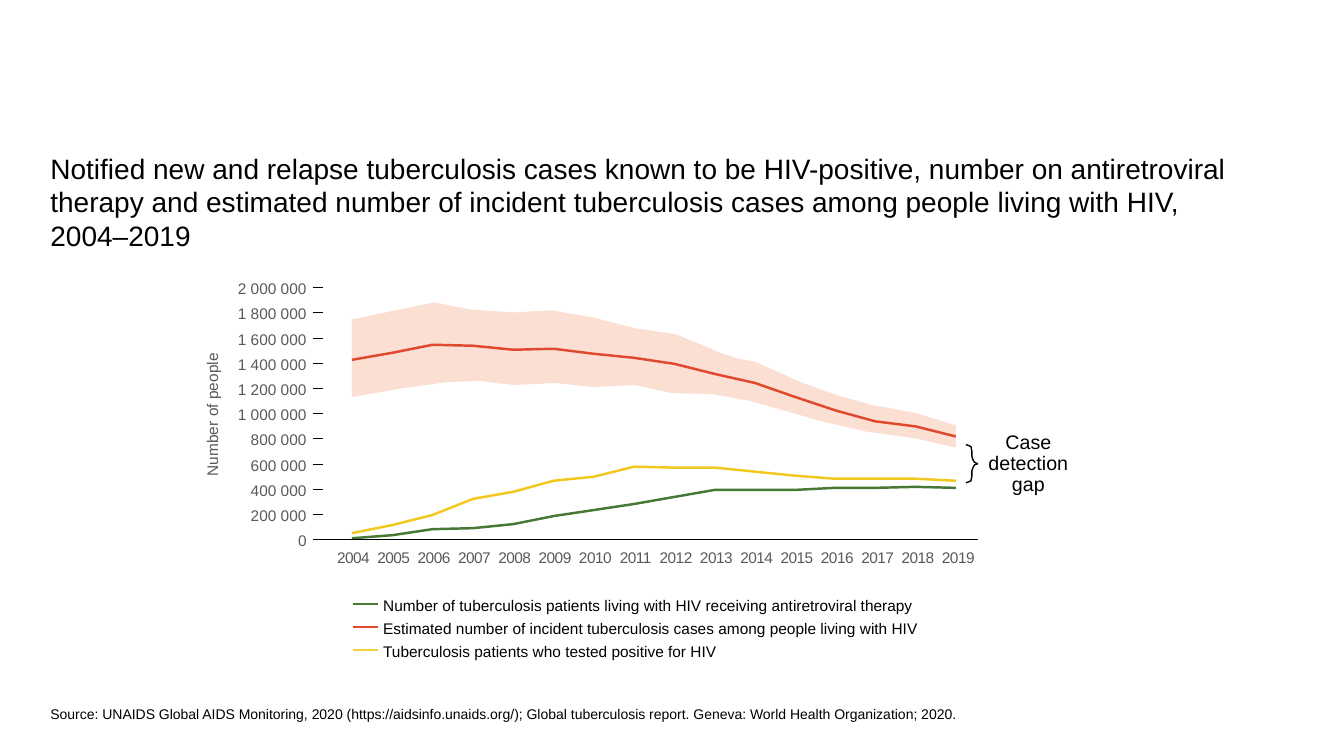
from lxml.etree import SubElement
from pptx import Presentation
from pptx.dml.color import RGBColor
from pptx.enum.shapes import MSO_CONNECTOR as Connector
from pptx.enum.text import MSO_AUTO_SIZE as AutoSize, PP_ALIGN as Align
from pptx.oxml.ns import qn
from pptx.util import Pt

EMU_PER_PX = 9144
BLACK, GREY = "000000", "595959"
GREEN, RED, YELLOW = "477835", "E1492E", "F2C81E"
LEGEND_YELLOW, BAND = "F4D041", "FBDFD3"

THERAPY = [534, 531, 525, 524, 520, 512, 506, 500, 493, 486, 486, 486, 484, 484, 483, 484]
TESTED = [529, 521, 511, 495, 488, 477, 473, 463, 464, 464, 468, 472, 475, 475, 475, 477]
INCIDENT = [357, 350, 342, 343, 347, 346, 351, 355, 361, 371, 380, 394, 407, 418, 423, 433]
UNCERTAINTY = [
    (431, 300), (426, 301), (349, 317), (349, 394), (394, 386), (444, 379), (476, 378),
    (510, 382), (550, 380), (560, 381), (588, 384), (628, 382), (639, 384), (666, 390),
    (706, 391), (712, 392), (745, 398), (815, 418), (858, 428), (908, 435), (948, 444),
    (948, 422), (909, 410), (877, 404), (865, 402), (855, 399), (833, 393), (796, 380),
    (749, 359), (744, 358), (733, 356), (717, 351), (671, 332), (660, 330), (631, 326),
    (588, 315), (582, 314), (571, 312), (548, 308), (544, 308), (510, 310), (465, 307),
]
BRACE = [(958, 441), (963, 443), (964, 448), (964, 451), (964, 453),
         (965, 456), (966, 458), (967, 459), (970, 460)]
LEGEND = [
    ("Number of tuberculosis patients living with HIV receiving antiretroviral therapy", GREEN, 529),
    ("Estimated number of incident tuberculosis cases among people living with HIV", RED, 534),
    ("Tuberculosis patients who tested positive for HIV", LEGEND_YELLOW, 341),
]
LABEL_WIDTHS = {9: 89, 7: 76, 1: 29}


def px(length):
    return round(length * EMU_PER_PX)


def color(code):
    return RGBColor.from_string(code)


class Painter:
    def __init__(self, page, font="Arial"):
        self.page = page
        self.font = font

    def text(self, words, left, top, width, height, size=11, ink=BLACK, align=Align.LEFT,
             leading=14, insets=(0, 0), wrap=False, grow=True, spacing=None, vert=None):
        box = self.page.shapes.add_textbox(px(left), px(top), px(width), px(height))
        frame = box.text_frame
        frame.word_wrap = wrap
        frame.auto_size = AutoSize.SHAPE_TO_FIT_TEXT if grow else AutoSize.NONE
        frame.margin_left = frame.margin_right = px(insets[0])
        frame.margin_top = frame.margin_bottom = px(insets[1])
        if vert:
            box.element.txBody.bodyPr.set("vert", vert)
        for index, line in enumerate(words.split("\n")):
            para = frame.add_paragraph() if index else frame.paragraphs[0]
            para.alignment = align
            if leading:
                para.line_spacing = Pt(leading)
            span = para.add_run()
            span.text = line
            span.font.name = self.font
            span.font.size = Pt(size)
            span.font.color.rgb = color(ink)
            if spacing:
                span.font._element.set("spc", str(spacing))

    def line(self, x1, y1, x2, y2, ink=BLACK, weight=0.25):
        line = self.page.shapes.add_connector(Connector.STRAIGHT, px(x1), px(y1), px(x2), px(y2))
        line.line.color.rgb = color(ink)
        line.line.width = Pt(weight)
        SubElement(line.element.spPr, qn("a:effectLst"))

    def outline(self, points, ink=None, weight=1.75, fill=None):
        builder = self.page.shapes.build_freeform(*points[0], scale=EMU_PER_PX)
        builder.add_line_segments(points[1:], close=bool(fill))
        shape = builder.convert_to_shape()
        shape.shadow.inherit = False
        if fill:
            shape.fill.solid()
            shape.fill.fore_color.rgb = color(fill)
        else:
            shape.fill.background()
        if ink:
            shape.line.color.rgb = color(ink)
            shape.line.width = Pt(weight)
        else:
            shape.line.fill.background()

    def series(self, heights, ink):
        self.outline([(round(349.2 + 39.94 * i), y) for i, y in enumerate(heights)], ink)


def main():
    deck = Presentation()
    deck.slide_width, deck.slide_height = px(1333), px(750)
    painter = Painter(deck.slides.add_slide(deck.slide_layouts[6]))

    painter.text("Notified new and relapse tuberculosis cases known to be HIV-positive, number on "
                 "antiretroviral therapy and estimated number of incident tuberculosis cases among "
                 "people living with HIV,\n2004–2019",
                 50, 150, 1250, 480, size=20, leading=24, wrap=True, grow=False)
    painter.text("Source: UNAIDS Global AIDS Monitoring, 2020 (https://aidsinfo.unaids.org/); Global "
                 "tuberculosis report. Geneva: World Health Organization; 2020.",
                 50, 700, 1208, 17, size=10, leading=None, wrap=True)

    painter.series(THERAPY, GREEN)
    painter.series(TESTED, YELLOW)
    painter.outline(UNCERTAINTY, fill=BAND)
    painter.series(INCIDENT, RED)

    painter.text("Number of people", 200, 350, 18, 123, ink=GREY, align=Align.CENTER, vert="vert270")
    for step in range(11):
        label = f"{2000000 - 200000 * step:,}".replace(",", " ")
        width = LABEL_WIDTHS[len(label)]
        painter.text(label, 314 - width, 271 + 25 * step, width, 28, ink=GREY,
                     align=Align.RIGHT, insets=(10, 5))
        y = 285 + 25 * step
        painter.line(310, y, 970 if label == "0" else 320, y)
    for index in range(16):
        painter.text(str(2004 + index), 334 + 40 * index, 538, 33, 28, ink=GREY,
                     align=Align.CENTER, insets=(0, 5), spacing=-40)

    for row, (label, ink, width) in enumerate(LEGEND):
        painter.text(label, 380, 590 + 23 * row, width, 18)
        painter.line(350, 599 + 23 * row, 375, 599 + 23 * row, ink, 1.75)

    painter.outline(BRACE, BLACK, 1)
    painter.outline([(x, 920 - y) for x, y in BRACE], BLACK, 1)
    painter.text("Case\ndetection\ngap", 970, 424, 100, 73, size=14, align=Align.CENTER,
                 leading=15, insets=(10, 5))
    deck.save("out.pptx")


if __name__ == "__main__":
    main()
